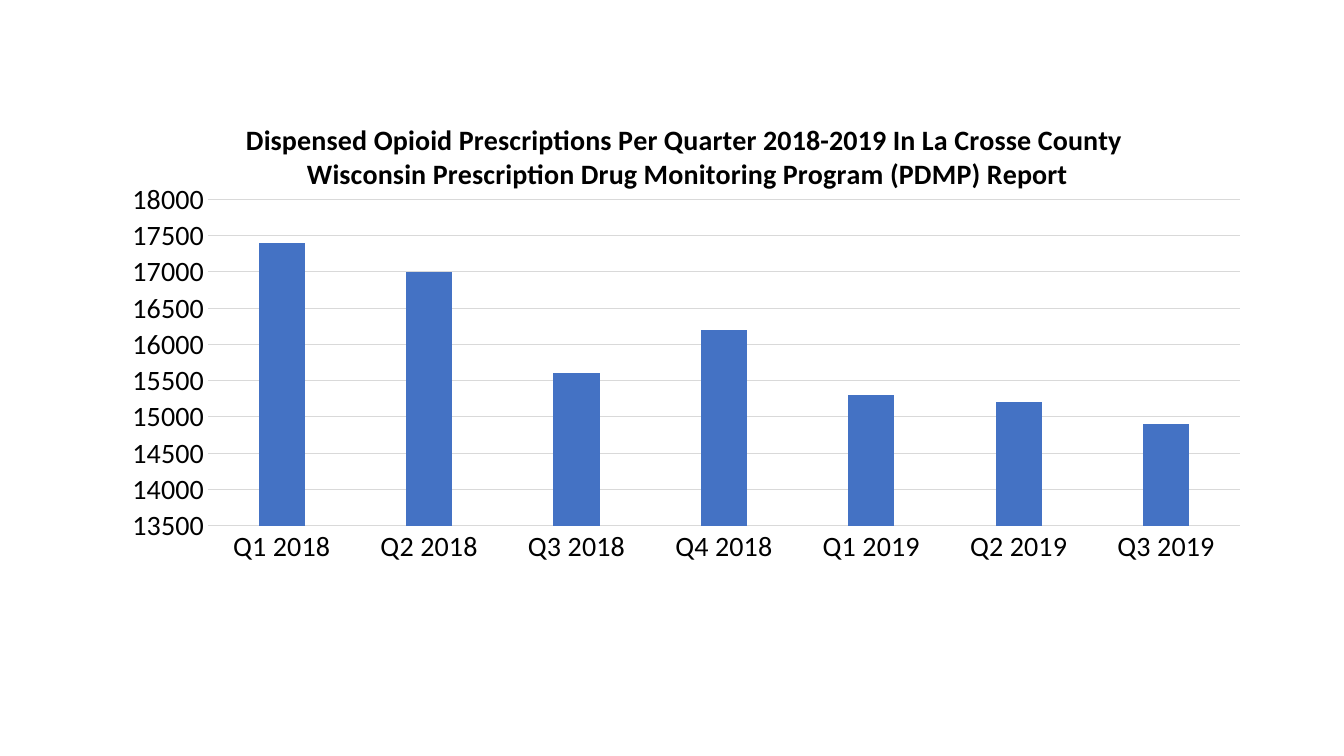
from lxml import etree
from pptx import Presentation
from pptx.chart.data import CategoryChartData
from pptx.dml.color import RGBColor
from pptx.enum.chart import XL_CHART_TYPE, XL_TICK_MARK
from pptx.oxml.ns import qn
from pptx.util import Pt

COLUMNS = XL_CHART_TYPE.COLUMN_CLUSTERED
NO_TICK = XL_TICK_MARK.NONE
BLANK_LAYOUT = 6

COLORS = {"text": "000000", "bar": "4472C4", "rule": "D9D9D9"}

TITLE_LINES = [
    "Dispensed Opioid Prescriptions Per Quarter 2018-2019 In La Crosse County ",
    "Wisconsin Prescription Drug Monitoring Program (PDMP) Report",
]
PRESCRIPTIONS = {
    "Q1 2018": 17400,
    "Q2 2018": 17000,
    "Q3 2018": 15600,
    "Q4 2018": 16200,
    "Q1 2019": 15300,
    "Q2 2019": 15200,
    "Q3 2019": 14900,
}


def place(element, index, **fractions):
    """Set a manual layout, in fractions of the chart, as child number index."""
    for layout in element.findall(qn("c:layout")):
        element.remove(layout)
    layout = etree.Element(qn("c:layout"))
    manual = etree.SubElement(layout, qn("c:manualLayout"))
    settings = {"xMode": "edge", "yMode": "edge", **fractions}
    if "w" in fractions:
        settings = {"layoutTarget": "inner", **settings}
    for tag, value in settings.items():
        etree.SubElement(manual, qn(f"c:{tag}")).set("val", str(value))
    element.insert(index, layout)


class ReportSlide:
    font_name = "Calibri"
    font_size = 20
    rule_width = 0.75

    def __init__(self, slide):
        self.slide = slide

    def color(self, name):
        return RGBColor.from_string(COLORS[name])

    def style_font(self, font, bold=False):
        font.name = self.font_name
        font.size = Pt(self.font_size)
        font.bold = bold
        font.color.rgb = self.color("text")

    def style_rule(self, line):
        line.color.rgb = self.color("rule")
        line.width = Pt(self.rule_width)

    def add_column_chart(self, left, top, width, height, values_by_quarter):
        data = CategoryChartData()
        data.categories = list(values_by_quarter)
        data.add_series("Series 1", list(values_by_quarter.values()))
        frame = self.slide.shapes.add_chart(
            COLUMNS, Pt(left), Pt(top), Pt(width), Pt(height), data)
        chart = frame.chart
        chart.has_legend = False
        self.style_font(chart.font)
        columns = chart.plots[0]
        columns.vary_by_categories = False
        columns.gap_width = 219
        columns.overlap = -27
        fill = columns.series[0].format.fill
        fill.solid()
        fill.fore_color.rgb = self.color("bar")
        place(chart._chartSpace.chart.plotArea, 0, x=0.09, y=0.21, w=0.89, h=0.68)
        return chart

    def style_axes(self, chart, minimum, maximum, step):
        quarters, counts = chart.category_axis, chart.value_axis
        for axis in (quarters, counts):
            axis.major_tick_mark = NO_TICK
            axis.minor_tick_mark = NO_TICK
            self.style_font(axis.tick_labels.font)
        self.style_rule(quarters.format.line)
        counts.format.line.fill.background()
        counts.has_major_gridlines = True
        self.style_rule(counts.major_gridlines.format.line)
        counts.minimum_scale = minimum
        counts.maximum_scale = maximum
        counts.major_unit = step

    def add_chart_title(self, chart, lines):
        title = chart.chart_title
        frame = title.text_frame
        for number, line in enumerate(lines):
            paragraph = frame.add_paragraph() if number else frame.paragraphs[0]
            run = paragraph.add_run()
            run.text = line
            self.style_font(run.font, bold=True)
        title.include_in_layout = False
        place(title._element, 1, x=0.12, y=0.04)


def main():
    presentation = Presentation()
    presentation.slide_width = Pt(960)
    presentation.slide_height = Pt(540)
    layout = presentation.slide_layouts[BLANK_LAYOUT]
    report = ReportSlide(presentation.slides.add_slide(layout))

    chart = report.add_column_chart(74.16, 70.56, 828, 342.72, PRESCRIPTIONS)
    report.style_axes(chart, minimum=13500, maximum=18000, step=500)
    report.add_chart_title(chart, TITLE_LINES)

    presentation.save("out.pptx")


if __name__ == "__main__":
    main()
